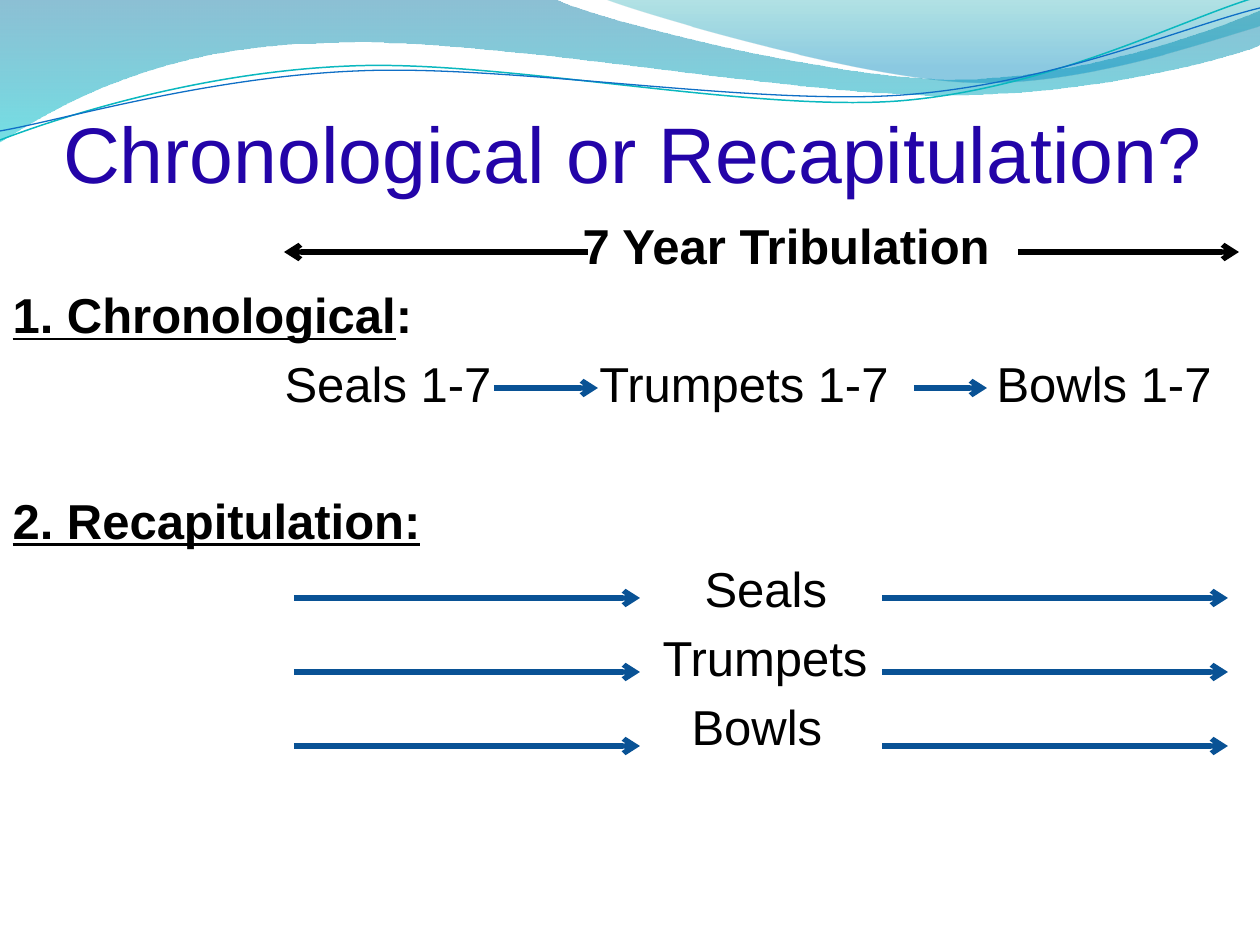
from pptx import Presentation
from pptx.dml.color import RGBColor
from pptx.enum.shapes import MSO_CONNECTOR
from pptx.enum.text import MSO_ANCHOR, MSO_AUTO_SIZE, PP_ALIGN
from pptx.oxml.ns import qn
from pptx.util import Pt
from lxml.etree import SubElement

SCALE = 914400 / 126


def px(length):
    """Turn pixels into EMU."""
    return round(length * SCALE)


def color(value):
    """Turn a hex string into a colour."""
    return RGBColor.from_string(value)


def apply(target, values):
    """Set every attribute named in a dict."""
    for name, value in values.items():
        setattr(target, name, value)


def box(left, top, width, height):
    """Return a position and size as format values."""
    return dict(left=px(left), top=px(top), width=px(width), height=px(height))


class SlideBuilder:
    """Hold the style and the current slide."""

    font = "Arial"
    title_color = "2304A8"
    black = "000000"
    blue = "095295"

    def __init__(self, presentation):
        """Add a title and body slide."""
        self.slide = presentation.slides.add_slide(presentation.slide_layouts[1])
        self.backdrop_count = 0

    def run(self, paragraph, text, size, value, **formats):
        """Add a formatted run."""
        run = paragraph.add_run()
        run.text = text
        apply(run.font, dict(name=self.font, size=Pt(size), **formats))
        run.font.color.rgb = color(value)
        return run

    def title(self, text, area):
        """Fill the title placeholder."""
        shape = self.slide.shapes.title
        apply(shape, area)
        apply(shape.text_frame, dict(margin_left=0, margin_right=0, margin_bottom=0, word_wrap=True,
                                     vertical_anchor=MSO_ANCHOR.BOTTOM, auto_size=MSO_AUTO_SIZE.NONE))
        paragraph = shape.text_frame.paragraphs[0]
        paragraph.alignment = PP_ALIGN.LEFT
        self.run(paragraph, text, 45, self.title_color)

    def body(self, lines, area):
        """Fill the body placeholder with indented lines."""
        shape = self.slide.placeholders[1]
        apply(shape, area)
        frame = shape.text_frame
        apply(frame, dict(margin_top=px(6), word_wrap=True, auto_size=MSO_AUTO_SIZE.NONE,
                          vertical_anchor=MSO_ANCHOR.TOP))
        for index, (space, left, runs) in enumerate(lines):
            paragraph = frame.add_paragraph() if index else frame.paragraphs[0]
            apply(paragraph, dict(alignment=PP_ALIGN.LEFT, space_before=Pt(space)))
            properties = paragraph._p.get_or_add_pPr()
            for name, value in dict(marL=px(left), indent=0).items():
                properties.set(name, str(value))
            SubElement(properties, qn("a:buNone"))
            for text, formats in runs:
                run = self.run(paragraph, text, 28, self.black, **formats)
                if text == " ":
                    run.font._element.set("spc", "5400")

    def outline(self, start, segments, close):
        """Add an outline of lines and Bezier curves behind the text."""
        ends = [tuple(map(px, segment[-1])) for segment in segments]
        builder = self.slide.shapes.build_freeform(*map(px, start), scale=1.0)
        builder.add_line_segments(ends, close=close)
        shape = builder.convert_to_shape()
        shape.shadow.inherit = False
        lines = list(shape._element.iter(qn("a:lnTo")))
        for line, segment in zip(lines, segments):
            if len(segment) == 3:
                curve = SubElement(line.getparent(), qn("a:cubicBezTo"))
                for x, y in segment:
                    SubElement(curve, qn("a:pt"), x=str(px(x) - shape.left), y=str(px(y) - shape.top))
                line.getparent().replace(line, curve)
        self.slide.shapes._spTree.insert(2 + self.backdrop_count, shape._element)
        self.backdrop_count += 1
        return shape

    def wave(self, start, segments, stops):
        """Add a translucent gradient wave."""
        shape = self.outline(start, segments, True)
        shape.line.fill.background()
        shape.fill.gradient()
        shape.fill.gradient_angle = 270
        for stop, (position, value, opacity) in zip(shape.fill.gradient_stops, stops):
            stop.position = position
            stop.color.rgb = color(value)
            SubElement(stop._gs[0], qn("a:alpha"), val=str(opacity * 1000))

    def strand(self, start, segments, value, width):
        """Add a thin curved line."""
        shape = self.outline(start, segments, False)
        shape.fill.background()
        shape.line.color.rgb = color(value)
        shape.line.width = Pt(width)

    def arrow(self, start, end, y, value):
        """Add a horizontal arrow."""
        connector = self.slide.shapes.add_connector(MSO_CONNECTOR.STRAIGHT, px(start), px(y), px(end), px(y))
        connector.line.color.rgb = color(value)
        connector.line.width = Pt(3)
        SubElement(connector.line._get_or_add_ln(), qn("a:tailEnd"), type="arrow")
        SubElement(connector._element.spPr, qn("a:effectLst"))


def main():
    """Build and save the slide."""
    presentation = Presentation()
    apply(presentation, dict(slide_width=px(1260), slide_height=px(945)))
    builder = SlideBuilder(presentation)

    builder.wave((0, 0), [
        [(554, -1)], [(600, 21), (837, 79), (955, 79)], [(1075, 79), (1207, 33), (1260, 11)],
        [(1261, 45)], [(1239, 55), (1096, 96), (940, 95)], [(784, 95), (481, 35), (324, 43)],
        [(163, 45), (58, 105), (-1, 142)]], [(0, "0074A1", 45), (1, "00C6CF", 55)])
    builder.wave((604, -1), [
        [(641, 14), (859, 78), (969, 82)], [(1079, 87), (1211, 40), (1260, 26)],
        [(1260, 0)]], [(0, "00A1A9", 30), (0.8, "008BBF", 45)])
    builder.strand((0, 140), [
        [(60, 117), (199, 72), (349, 66)], [(498, 59), (747, 112), (898, 101)],
        [(1050, 89), (1182, 19), (1257, -3)]], "0AB8BF", 0.85)
    builder.strand((0, 131), [
        [(59, 121), (207, 77), (357, 71)], [(508, 64), (752, 106), (903, 95)],
        [(1053, 84), (1186, 26), (1260, 8)]], "0F6FC6", 0.75)

    builder.title("Chronological or Recapitulation?", box(63, 42, 1144, 157))
    bold, plain = dict(bold=True), dict(bold=False)
    heading = dict(bold=True, underline=True)
    gap = (" ", plain)
    builder.body([
        (0, 570, [("7 Year Tribulation", bold)]),
        (5.6, 0, [("1. Chronological", heading), (":", bold)]),
        (5.6, 272, [("Seals 1-7", plain), gap, ("Trumpets 1-7", plain), gap, ("Bowls 1-7", plain)]),
        (44.6, 0, [("2. Recapitulation:", heading)]),
        (5.6, 692, [("Seals", plain)]),
        (5.6, 650, [("Trumpets", plain)]),
        (5.6, 679, [("Bowls", plain)]),
    ], box(0, 210, 1239, 714))

    for start, end in ((588, 284), (1018, 1239)):
        builder.arrow(start, end, 252, builder.black)
    for start, end in ((494, 598), (914, 987)):
        builder.arrow(start, end, 388, builder.blue)
    for row in range(3):
        for start in (294, 882):
            builder.arrow(start, start + 346, 598 + 74 * row, builder.blue)

    presentation.save("out.pptx")


if __name__ == "__main__":
    main()
